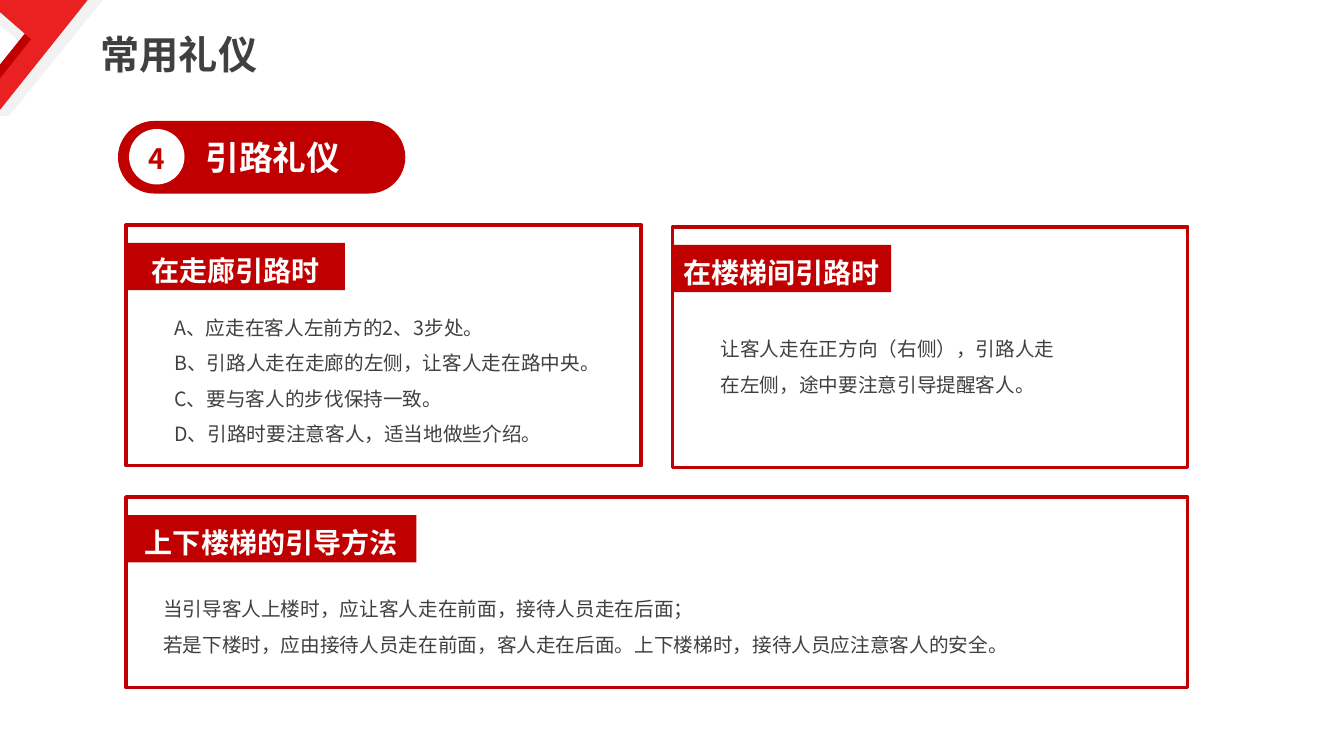
"""Build the slide on guiding guests, with one pill heading and three framed cards."""
import dataclasses
import typing

import pptx
import pptx.dml.color
import pptx.enum.shapes
import pptx.enum.text
import pptx.oxml
import pptx.oxml.ns
import pptx.shapes.autoshape
import pptx.slide
import pptx.util

SCALE = 9144
FONT = "Noto Sans CJK SC"
HUES = {"red": "C00000", "bright": "E92121", "pale": "F2F2F2", "white": "FFFFFF", "ink": "404040"}
KIND = pptx.enum.shapes.MSO_SHAPE
ALIGN = pptx.enum.text.PP_ALIGN
Shape = pptx.shapes.autoshape.Shape
Slide = pptx.slide.Slide


class Box(typing.NamedTuple):
    left: int
    top: int
    width: int
    height: int

    def emu(self) -> list[int]:
        return [side * SCALE for side in self]


@dataclasses.dataclass(frozen=True)
class Style:
    size: int
    hue: str
    bold: bool = True
    gap: float = 1.0
    align: typing.Any = ALIGN.LEFT


@dataclasses.dataclass(frozen=True)
class Card:
    frame: Box
    label: str
    tab: int
    body: Box
    lines: tuple[str, ...]
    inset: int = 10


@dataclasses.dataclass(frozen=True)
class Patch:
    hue: str
    points: tuple[tuple[int, int], ...]


LABEL = Style(20, "white", gap=1.2, align=ALIGN.CENTER)
BODY = Style(14, "ink", bold=False, gap=1.5)

PATCHES = (
    Patch("pale", ((84, 0), (102, 0), (9, 115), (0, 115), (0, 104))),
    Patch("pale", ((0, 0), (36, 0), (36, 55), (0, 25))),
    Patch("red", ((41, 13), (63, 13), (9, 81), (13, 85), (0, 102), (0, 64))),
    Patch("bright", ((0, 0), (87, 0), (0, 109), (0, 78), (31, 39), (0, 12))),
)

CARDS = (
    Card(Box(125, 493, 1053, 189), "上下楼梯的引导方法", 288, Box(152, 576, 919, 77), (
        "当引导客人上楼时，应让客人走在前面，接待人员走在后面；",
        "若是下楼时，应由接待人员走在前面，客人走在后面。上下楼梯时，接待人员应注意客人的安全。",
    )),
    Card(Box(125, 223, 511, 239), "在走廊引路时", 217, Box(141, 297, 462, 147), (
        "A、应走在客人左前方的2、3步处。",
        "B、引路人走在走廊的左侧，让客人走在路中央。",
        "C、要与客人的步伐保持一致。",
        "D、引路时要注意客人，适当地做些介绍。",
    ), inset=32),
    Card(Box(667, 225, 511, 239), "在楼梯间引路时", 217, Box(705, 318, 364, 77), (
        "让客人走在正方向（右侧），引路人走在左侧，途中要注意引导提醒客人。",
    )),
)


def tint(hue: str) -> pptx.dml.color.RGBColor:
    return pptx.dml.color.RGBColor.from_string(HUES[hue])


def paint(shape: Shape, hue: str) -> None:
    shape.shadow.inherit = False
    shape.fill.solid()
    shape.fill.fore_color.rgb = tint(hue)
    shape.line.fill.background()


def add_block(slide: Slide, kind: KIND, box: Box, hue: str) -> Shape:
    shape = slide.shapes.add_shape(kind, *box.emu())
    paint(shape, hue)
    return shape


def add_patch(slide: Slide, patch: Patch) -> None:
    first, *rest = patch.points
    pen = slide.shapes.build_freeform(*first, scale=SCALE)
    pen.add_line_segments(rest, close=True)
    paint(pen.convert_to_shape(), patch.hue)


def write(shape: Shape, lines: tuple[str, ...], style: Style) -> None:
    frame = shape.text_frame
    frame.text = "\n".join(lines)
    for para in frame.paragraphs:
        para.alignment = style.align
        para.line_spacing = style.gap
        font = para.font
        font.name = FONT
        font.size = pptx.util.Pt(style.size)
        font.bold = style.bold
        font.color.rgb = tint(style.hue)
        props = para._p.pPr.find(pptx.oxml.ns.qn("a:defRPr"))
        east = pptx.oxml.parse_xml(
            f'<a:ea {pptx.oxml.ns.nsdecls("a")} typeface="{FONT}"/>')
        props.find(pptx.oxml.ns.qn("a:latin")).addnext(east)


def add_text(slide: Slide, box: Box, lines: tuple[str, ...], style: Style,
             wrap: bool = True) -> Shape:
    shape = slide.shapes.add_textbox(*box.emu())
    shape.text_frame.word_wrap = wrap
    write(shape, lines, style)
    return shape


def add_card(slide: Slide, card: Card) -> None:
    frame = slide.shapes.add_shape(KIND.RECTANGLE, *card.frame.emu())
    frame.shadow.inherit = False
    frame.fill.background()
    frame.line.color.rgb = tint("red")
    frame.line.width = pptx.util.Pt(2.5)
    tab = Box(card.frame.left, card.frame.top + 18, card.tab, 47)
    write(add_block(slide, KIND.RECTANGLE, tab, "red"), (card.label,), LABEL)
    body = add_text(slide, card.body, card.lines, BODY)
    body.text_frame.margin_left = card.inset * SCALE
    body.text_frame.margin_right = 0 if card.inset > 10 else 10 * SCALE


def main() -> None:
    deck = pptx.Presentation()
    deck.slide_width = 1333 * SCALE
    deck.slide_height = 750 * SCALE
    slide = deck.slides.add_slide(deck.slide_layouts[6])
    for patch in PATCHES:
        add_patch(slide, patch)
    for card in CARDS:
        add_card(slide, card)
    pill = add_block(slide, KIND.ROUNDED_RECTANGLE, Box(117, 120, 285, 72), "red")
    pill.adjustments[0] = 0.5
    add_block(slide, KIND.OVAL, Box(128, 128, 55, 55), "white")
    add_text(slide, Box(194, 131, 174, 50), ("引路礼仪",), Style(24, "white"))
    add_text(slide, Box(137, 135, 50, 44), ("4",), Style(20, "red"))
    add_text(slide, Box(90, 25, 177, 57), ("常用礼仪",), Style(28, "ink"), wrap=False)
    deck.save("out.pptx")


if __name__ == "__main__":
    main()
